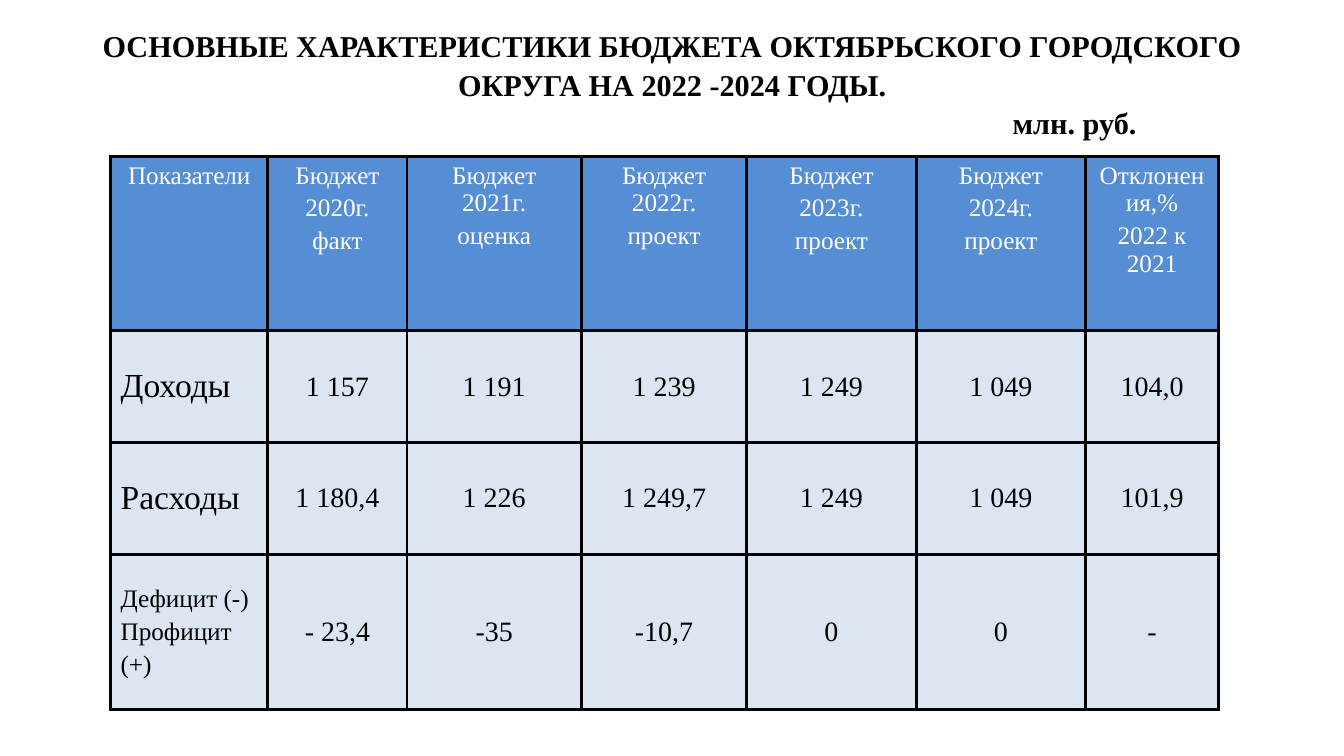
from dataclasses import dataclass
from typing import Any

from lxml import etree
from pptx import Presentation
from pptx import util as u
from pptx.dml import color
from pptx.enum import text
from pptx.oxml import ns

FONT = "Times New Roman"
BLACK, WHITE, BLUE, PALE = "000000", "FFFFFF", "558ED5", "DCE6F2"
LEFT, MID = text.PP_ALIGN.LEFT, text.PP_ALIGN.CENTER
TOP, CENTER = text.MSO_ANCHOR.TOP, text.MSO_ANCHOR.MIDDLE

WIDTHS = (3.96, 3.51, 4.39, 4.17, 4.27, 4.27, 3.35)
HEIGHTS = (4.39, 2.82, 2.82, 3.91)


@dataclass
class Style:
    size: float
    ink: str
    align: Any
    anchor: Any = CENTER
    fill: str = PALE


@dataclass
class Row:
    label: str
    cells: tuple[str, ...]
    first: Style
    rest: Style


HEAD = Style(18, WHITE, MID, TOP, BLUE)
NAME = Style(24, BLACK, LEFT)
NOTE = Style(18, BLACK, LEFT)
VALUE = Style(20, BLACK, MID)

ROWS = (
    Row("Показатели",
        ("Бюджет\n2020г.\nфакт", "Бюджет 2021г.\nоценка", "Бюджет 2022г.\nпроект",
         "Бюджет\n2023г.\nпроект", "Бюджет\n2024г.\nпроект", "Отклонения,%\n2022 к 2021"),
        HEAD, HEAD),
    Row("Доходы", ("1 157", "1 191", "1 239", "1 249", "1 049", "104,0"), NAME, VALUE),
    Row("Расходы", ("1 180,4", "1 226", "1 249,7", "1 249", "1 049", "101,9"), NAME, VALUE),
    Row("Дефицит (-)\nПрофицит\n(+)", ("- 23,4", "-35", "-10,7", "0", "0", "-"), NOTE, VALUE),
)


def apply(item: Any, form: dict[str, Any]) -> None:
    for key, val in form.items():
        setattr(item, key, val)


def paint(fmt: Any, tone: str) -> None:
    fmt.solid()
    fmt.fore_color.rgb = color.RGBColor.from_string(tone)


def write(frame: Any, words: str, style: Style, bold: bool = False) -> None:
    frame.text = words
    for part in frame.paragraphs:
        part.alignment = style.align
        for run in part.runs:
            apply(run.font, {"name": FONT, "size": u.Pt(style.size), "bold": bold})
            paint(run.font.fill, style.ink)


def border(cell: Any) -> None:
    props = cell._tc.get_or_add_tcPr()
    for side in ("lnL", "lnR", "lnT", "lnB"):
        line = etree.SubElement(props, ns.qn(f"a:{side}"), w=str(u.Pt(2.25)))
        fill = etree.SubElement(line, ns.qn("a:solidFill"))
        etree.SubElement(fill, ns.qn("a:srgbClr"), val=BLACK)


def draw_cell(cell: Any, words: str, style: Style) -> None:
    border(cell)
    paint(cell.fill, style.fill)
    apply(cell, {"vertical_anchor": style.anchor,
                 "margin_left": u.Cm(0.25), "margin_right": u.Cm(0.25),
                 "margin_top": u.Cm(0.13), "margin_bottom": u.Cm(0.13)})
    write(cell.text_frame, words, style)
    for part in cell.text_frame.paragraphs[1:]:
        part.space_before = u.Pt(style.size * 0.2)


def draw_title(slide: Any) -> None:
    box = slide.shapes.add_textbox(u.Cm(1.7), u.Cm(0.76), u.Cm(30.48), u.Cm(2.67))
    frame = box.text_frame
    apply(frame, {"word_wrap": True, "vertical_anchor": CENTER})
    write(frame, "ОСНОВНЫЕ ХАРАКТЕРИСТИКИ БЮДЖЕТА ОКТЯБРЬСКОГО ГОРОДСКОГО "
          "ОКРУГА НА 2022 -2024 ГОДЫ.\nмлн. руб.", Style(21.6, BLACK, MID), True)
    for part in frame.paragraphs:
        part.line_spacing = 1.06
    unit = frame.paragraphs[1]
    unit.alignment = LEFT
    unit._p.get_or_add_pPr().set("marL", str(u.Cm(23.57)))


def draw_table(slide: Any) -> None:
    grid = slide.shapes.add_table(len(ROWS), len(WIDTHS), u.Cm(2.79), u.Cm(3.94),
                                  u.Cm(sum(WIDTHS)), u.Cm(sum(HEIGHTS))).table
    apply(grid, {"first_row": False, "horz_banding": False})
    for col, width in zip(grid.columns, WIDTHS):
        col.width = u.Cm(width)
    for line, height, row in zip(grid.rows, HEIGHTS, ROWS):
        line.height = u.Cm(height)
        for num, words in enumerate((row.label, *row.cells)):
            draw_cell(line.cells[num], words, row.rest if num else row.first)


def main() -> None:
    deck = Presentation()
    apply(deck, {"slide_width": u.Cm(33.87), "slide_height": u.Cm(19.05)})
    slide = deck.slides.add_slide(deck.slide_layouts[6])
    draw_title(slide)
    draw_table(slide)
    deck.save("out.pptx")


if __name__ == "__main__":
    main()
